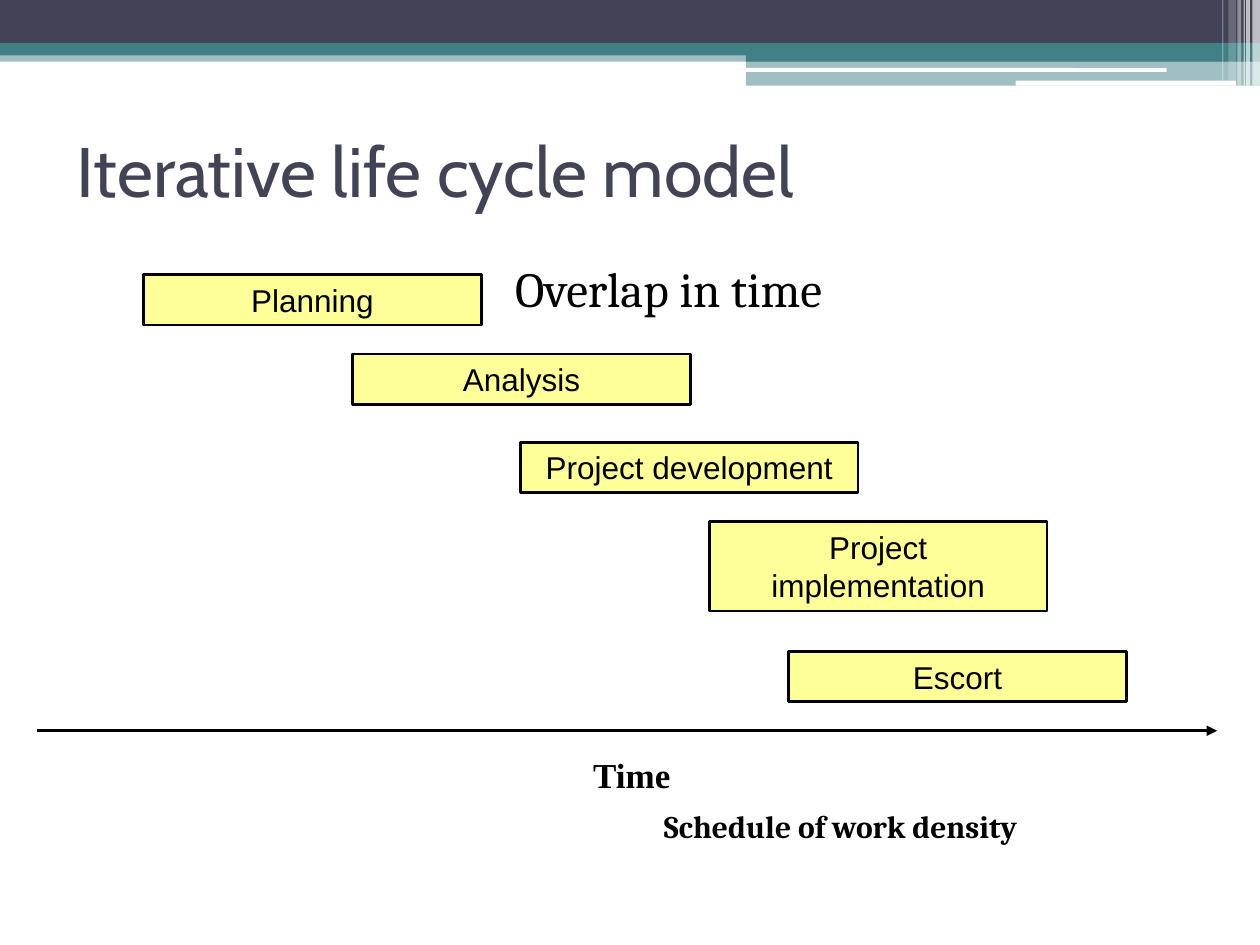
from lxml.etree import SubElement
from pptx import Presentation
from pptx.dml.color import RGBColor
from pptx.enum.shapes import MSO_CONNECTOR, MSO_SHAPE
from pptx.enum.text import MSO_ANCHOR, MSO_AUTO_SIZE, PP_ALIGN
from pptx.oxml.ns import qn
from pptx.util import Pt

EMU_PER_PX = 9144
SLATE = RGBColor(0x42, 0x44, 0x56)
TEAL = RGBColor(0x43, 0x80, 0x86)
YELLOW = RGBColor(0xFF, 0xFF, 0x99)
WHITE = RGBColor(0xFF, 0xFF, 0xFF)
BLACK = RGBColor(0x00, 0x00, 0x00)

BANDS = [
    (0, 40, 1000, 9, TEAL, 50),
    (0, 0, 1000, 34, SLATE, 100),
    (0, 34, 1000, 10, TEAL, 100),
    (592, 39, 408, 10, TEAL, 100),
    (592, 48, 408, 20, TEAL, 50),
]
ROUNDED_STRIPES = [(591, 54, 335, 3), (806, 64, 175, 4)]
CORNER_STRIPES = [
    (994, 6, 68, 65),
    (989, 3, 68, 65),
    (987, 1, 68, 60),
    (982, 3, 68, 40),
    (975, 6, 64, 20),
    (970, 1, 64, 30),
]
PHASES = [
    ("Planning", 114, 218, 40),
    ("Analysis", 280, 281, 40),
    ("Project development", 413, 351, 40),
    ("Project implementation", 563, 414, 71),
    ("Escort", 626, 517, 40),
]
PHASE_WIDTH = 268


def px(*lengths):
    return [n * EMU_PER_PX for n in lengths]


class Deck:
    line_width = Pt(1.5)

    def __init__(self):
        self.prs = Presentation()
        self.prs.slide_width, self.prs.slide_height = px(1000, 750)
        self.s = self.prs.slides.add_slide(self.prs.slide_layouts[5])

    def set_text(self, tf, text, font, size, color=BLACK, bold=False,
                 align=PP_ALIGN.LEFT, anchor=MSO_ANCHOR.TOP):
        tf.text = text
        tf.word_wrap = True
        tf.vertical_anchor = anchor
        p = tf.paragraphs[0]
        p.alignment = align
        r = p.runs[0]
        r.font.name = font
        r.font.size = Pt(size)
        r.font.bold = bold
        r.font.color.rgb = color

    def title(self, text, x, y, w, h):
        sp = self.s.shapes.title
        sp.left, sp.top, sp.width, sp.height = px(x, y, w, h)
        self.set_text(sp.text_frame, text, "Cabin", 40, SLATE, anchor=MSO_ANCHOR.MIDDLE)

    def bar(self, x, y, w, h, color, opacity=100, kind=MSO_SHAPE.RECTANGLE):
        sp = self.s.shapes.add_shape(kind, *px(x, y, w, h))
        sp.shadow.inherit = False
        sp.fill.solid()
        sp.fill.fore_color.rgb = color
        sp.line.fill.background()
        if opacity < 100:
            clr = sp._element.spPr.find(qn("a:solidFill"))[0]
            SubElement(clr, qn("a:alpha"), val=str(opacity * 1000))
        return sp

    def phase(self, text, x, y, h):
        sp = self.bar(x, y, PHASE_WIDTH, h, YELLOW)
        sp.line.color.rgb = BLACK
        sp.line.width = self.line_width
        self.set_text(sp.text_frame, text, "Arial", 18, align=PP_ALIGN.CENTER)
        sp.text_frame.auto_size = MSO_AUTO_SIZE.SHAPE_TO_FIT_TEXT

    def label(self, text, x, y, w, h, font, size, bold=False):
        tf = self.s.shapes.add_textbox(*px(x, y, w, h)).text_frame
        self.set_text(tf, text, font, size, bold=bold)
        return tf

    def arrow(self, x1, y1, x2, y2):
        cxn = self.s.shapes.add_connector(MSO_CONNECTOR.STRAIGHT, *px(x1, y1, x2, y2))
        cxn.line.color.rgb = BLACK
        cxn.line.width = self.line_width
        ln = cxn._element.spPr.find(qn("a:ln"))
        SubElement(ln, qn("a:tailEnd"), type="triangle")
        SubElement(cxn._element.spPr, qn("a:effectLst"))


def main():
    deck = Deck()
    for band in BANDS:
        deck.bar(*band)
    for stripe in ROUNDED_STRIPES:
        deck.bar(*stripe, WHITE, kind=MSO_SHAPE.ROUNDED_RECTANGLE)
    for x, w, h, opacity in CORNER_STRIPES:
        deck.bar(x, 0, w, h, WHITE, opacity)

    deck.title("Iterative life cycle model", 51, 76, 900, 117)
    tf = deck.label("Overlap in time", 387, 200, 340, 58, "Cambria", 28)
    tf.paragraphs[0]._p.get_or_add_pPr().set("marL", str(12 * EMU_PER_PX))
    for phase in PHASES:
        deck.phase(*phase)

    deck.label("Time", 461, 593, 205, 44, "Times New Roman", 20, bold=True)
    deck.label("Schedule of work density", 517, 636, 359, 40, "Cambria", 18, bold=True)
    deck.arrow(29, 580, 966, 580)
    deck.prs.save("out.pptx")


if __name__ == "__main__":
    main()
